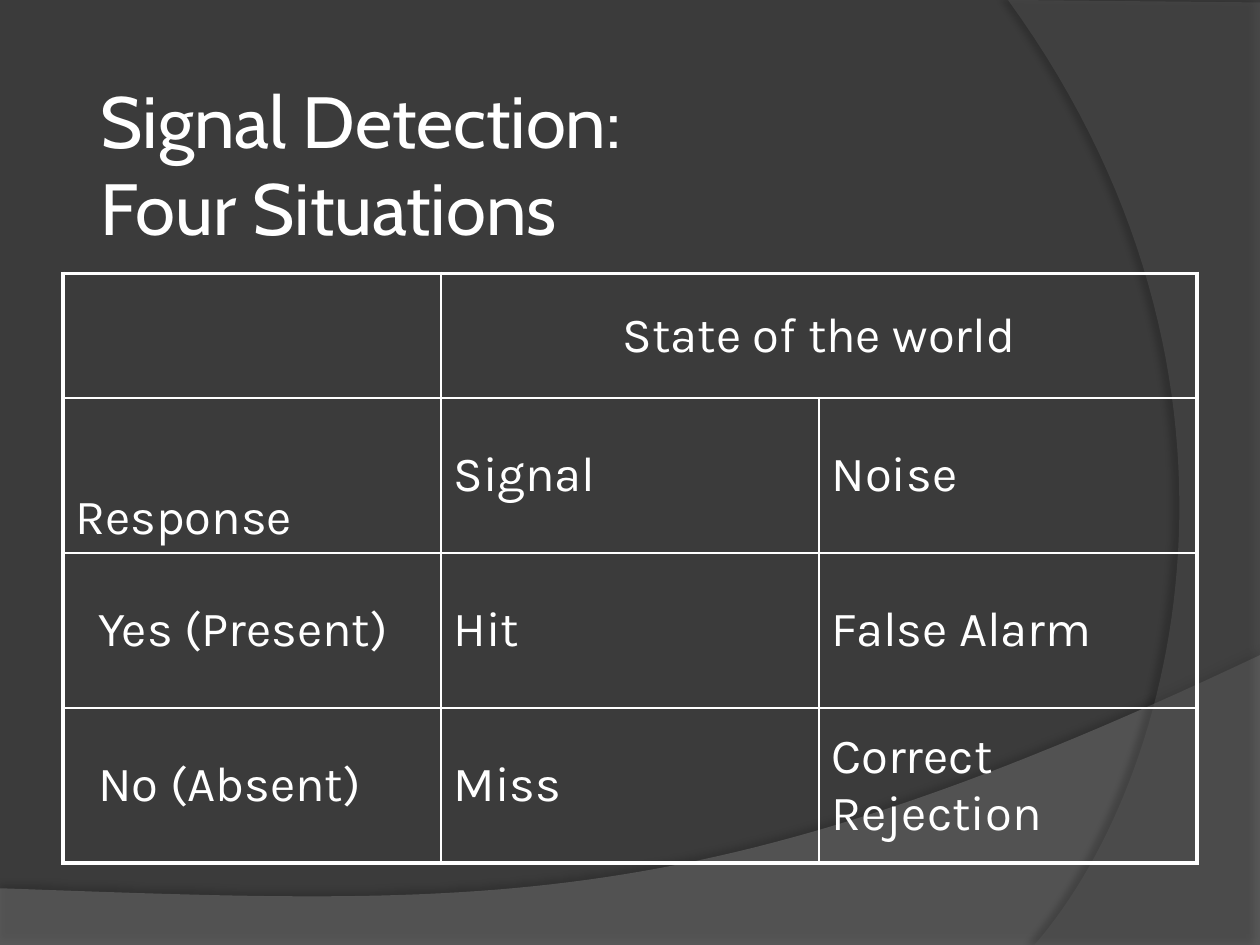
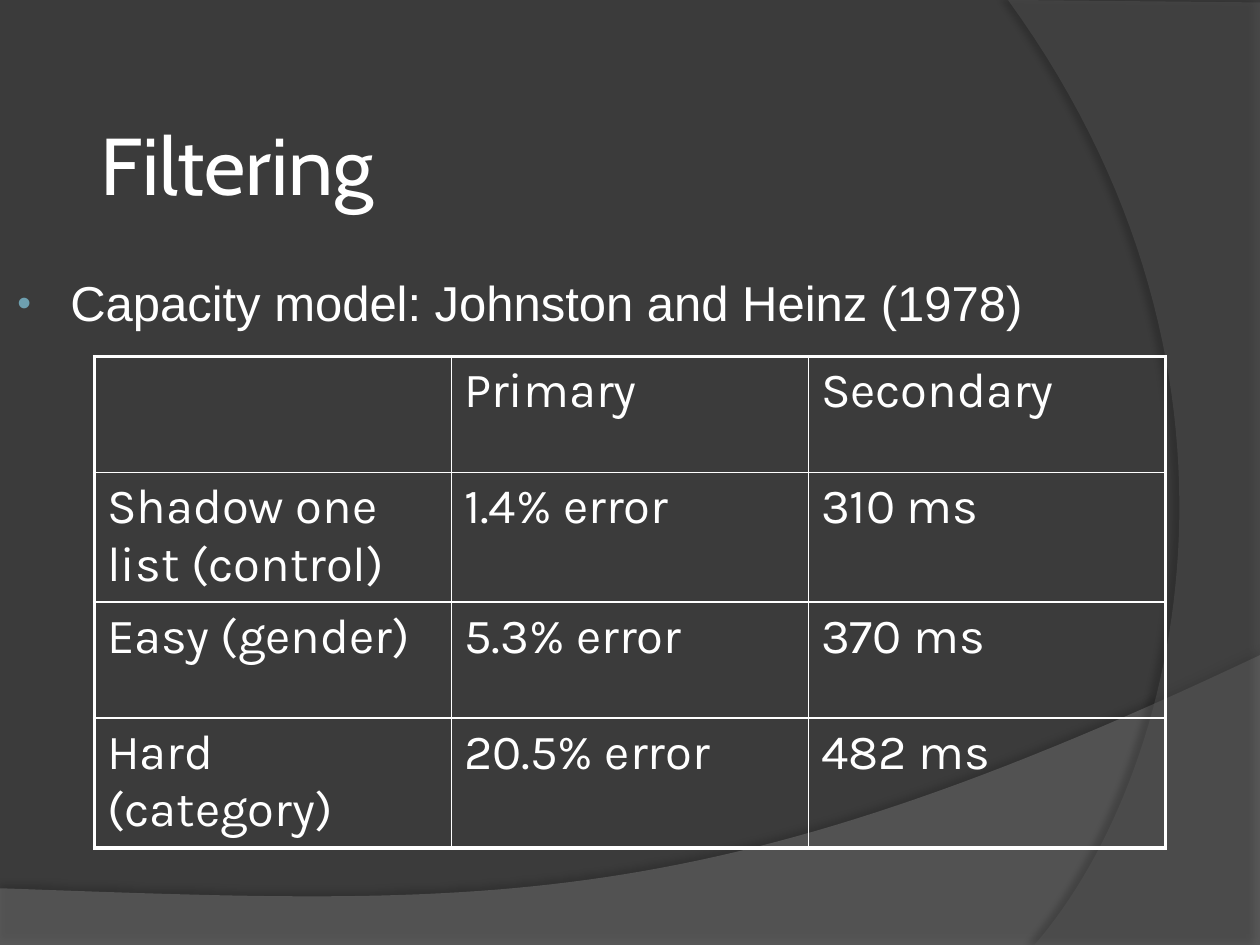
"""Build two dark slides on signal detection and filtering, each with a table."""
from lxml.etree import SubElement, fromstring
from pptx import Presentation
from pptx.dml.color import RGBColor
from pptx.enum.text import MSO_ANCHOR as Anchor, MSO_AUTO_SIZE as AutoSize, PP_ALIGN as Align
from pptx.oxml.ns import nsdecls, qn
from pptx.util import Inches, Pt

WHITE = RGBColor(0xFF, 0xFF, 0xFF)
BACKDROP = RGBColor(0x3B, 0x3B, 0x3B)
WAVE_GREY = RGBColor(0x7C, 0x7C, 0x7C)
ARC_GREY = RGBColor(0x59, 0x59, 0x59)
BULLET_BLUE = RGBColor(0x6E, 0xA0, 0xB0)
TITLE_FONT, TABLE_FONT, BODY_FONT = "Cabin", "Karla", "Arial"
TEXT_SIZE = 28
SPACE_BEFORE = Pt(0.2 * TEXT_SIZE)
OUTER_LINE, INNER_LINE = Pt(2.25), Pt(1)
CURVE_STEPS = 60


def add_span(para, text, font, size):
    span = para.add_run()
    span.text = text
    span.font.name = font
    span.font.size = Pt(size)
    span.font.color.rgb = WHITE


def add_table(page, left, top, column_width, row_heights, rows):
    frame = page.shapes.add_table(len(rows), len(rows[0]), Inches(left), Inches(top),
                                  Inches(column_width * len(rows[0])), Inches(sum(row_heights)))
    table = frame.table
    table.first_row = table.horz_banding = False
    for column in table.columns:
        column.width = Inches(column_width)
    for row, height in zip(table.rows, row_heights):
        row.height = Inches(height)
    last_row, last_column = len(rows) - 1, len(rows[0]) - 1
    for row_index, texts in enumerate(rows):
        for column_index, text in enumerate(texts):
            cell = table.cell(row_index, column_index)
            edges = {"lnL": column_index == 0, "lnR": column_index == last_column,
                     "lnT": row_index == 0, "lnB": row_index == last_row}
            properties = cell._tc.get_or_add_tcPr()
            for tag, is_outer in edges.items():
                width = OUTER_LINE if is_outer else INNER_LINE
                properties.append(fromstring(
                    f'<a:{tag} {nsdecls("a")} w="{width}"><a:solidFill>'
                    f'<a:srgbClr val="{WHITE}"/></a:solidFill></a:{tag}>'))
            cell.fill.background()
            if text:
                para = cell.text_frame.paragraphs[0]
                para.space_before = SPACE_BEFORE
                add_span(para, text, TABLE_FONT, TEXT_SIZE)
    return table


deck = Presentation()
deck.slide_width, deck.slide_height = Inches(10), Inches(7.5)
master = deck.slide_master
master.background.fill.solid()
master.background.fill.fore_color.rgb = BACKDROP

pages = []
for title_lines, title_size in [(["Signal Detection:", "Four Situations"], 41.4),
                                (["Filtering"], 46)]:
    page = deck.slides.add_slide(deck.slide_layouts[5])
    pages.append(page)
    title = page.shapes.title
    title.left, title.top = Inches(0.75), Inches(0.67)
    title.width, title.height = Inches(8.5), Inches(1.25)
    frame = title.text_frame
    frame.auto_size = AutoSize.NONE
    frame.vertical_anchor = Anchor.MIDDLE
    frame.margin_left = frame.margin_right = Inches(0.05)
    frame.margin_top = frame.margin_bottom = Inches(0.05)
    para = frame.paragraphs[0]
    para.alignment = Align.LEFT
    for line_index, line in enumerate(title_lines):
        if line_index:
            para.add_line_break()
        add_span(para, line, TITLE_FONT, title_size)
situations_page, filtering_page = pages

bands = [
    ([(0, 7.5), (10, 7.5)], [(10, 5.2), (5.59, 7.29), (3.91, 7.19), (0, 7.05)],
     WAVE_GREY, 45, 35, 3.5, 270),
    ([(10, 0.02), (10, 7.5)], [(8.21, 7.5), (9.35, 6.19), (10.18, 3), (8, 0)],
     ARC_GREY, 40, 45, 4, 180),
]
for position, (corners, curve, color, opacity, shade, distance, angle) in enumerate(bands):
    points = list(corners)
    for step in range(CURVE_STEPS + 1):
        t = step / CURVE_STEPS
        weights = ((1 - t) ** 3, 3 * t * (1 - t) ** 2, 3 * t ** 2 * (1 - t), t ** 3)
        points.append([sum(weight * value for weight, value in zip(weights, values))
                       for values in zip(*curve)])
    outline = [(Inches(x), Inches(y)) for x, y in points]
    builder = situations_page.shapes.build_freeform(*outline[0])
    builder.add_line_segments(outline[1:], close=True)
    band = builder.convert_to_shape()
    band.fill.solid()
    band.fill.fore_color.rgb = color
    band.line.fill.background()
    fill_color = band.element.spPr.find(qn("a:solidFill"))[0]
    SubElement(fill_color, qn("a:alpha"), val=str(opacity * 1000))
    band.element.spPr.append(fromstring(
        f'<a:effectLst {nsdecls("a")}><a:outerShdw blurRad="{Pt(4)}" dist="{Pt(distance)}" '
        f'dir="{angle * 60000}" algn="ctr" rotWithShape="0"><a:srgbClr val="000000">'
        f'<a:alpha val="{shade * 1000}"/></a:srgbClr></a:outerShdw></a:effectLst>'))
    master.shapes.element.insert(2 + position, band.element)

situations = add_table(situations_page, 0.5, 2.17, 3, [0.99, 1.23, 1.23, 1.23], [
    ["", "State of the world", ""],
    ["Response", "Signal", "Noise"],
    ["Yes (Present)", "Hit", "False Alarm"],
    ["No (Absent)", "Miss", "Correct Rejection"],
])
for cell in situations.iter_cells():
    cell.vertical_anchor = Anchor.MIDDLE
situations.cell(1, 0).vertical_anchor = Anchor.BOTTOM
for answer_row in (2, 3):
    situations.cell(answer_row, 0).margin_left = Inches(0.28)
world = situations.cell(0, 1)
world.merge(situations.cell(0, 2))
world.text_frame.paragraphs[0].alignment = Align.CENTER
world._tc.tcPr.find(qn("a:lnR")).set("w", str(OUTER_LINE))

add_table(filtering_page, 0.75, 2.83, 8.5 / 3, [0.92, 1.03, 0.92, 1.03], [
    ["", "Primary", "Secondary"],
    ["Shadow one list (control)", "1.4% error", "310 ms"],
    ["Easy (gender)", "5.3% error", "370 ms"],
    ["Hard (category)", "20.5% error", "482 ms"],
])

body = filtering_page.shapes.add_textbox(0, Inches(2.17), Inches(8.5), Inches(4.5))
body.text_frame.word_wrap = True
para = body.text_frame.paragraphs[0]
para.line_spacing = 0.9
para.space_before = SPACE_BEFORE
add_span(para, "Capacity model: Johnston and Heinz (1978)", BODY_FONT, TEXT_SIZE)
properties = para._p.get_or_add_pPr()
properties.set("marL", str(Inches(0.46)))
properties.set("indent", str(Inches(-0.42)))
bullet_color = SubElement(properties, qn("a:buClr"))
SubElement(bullet_color, qn("a:srgbClr"), val=str(BULLET_BLUE))
SubElement(properties, qn("a:buSzPct"), val="80000")
SubElement(properties, qn("a:buFont"), typeface=BODY_FONT)
SubElement(properties, qn("a:buChar"), char="•")

deck.save("out.pptx")
